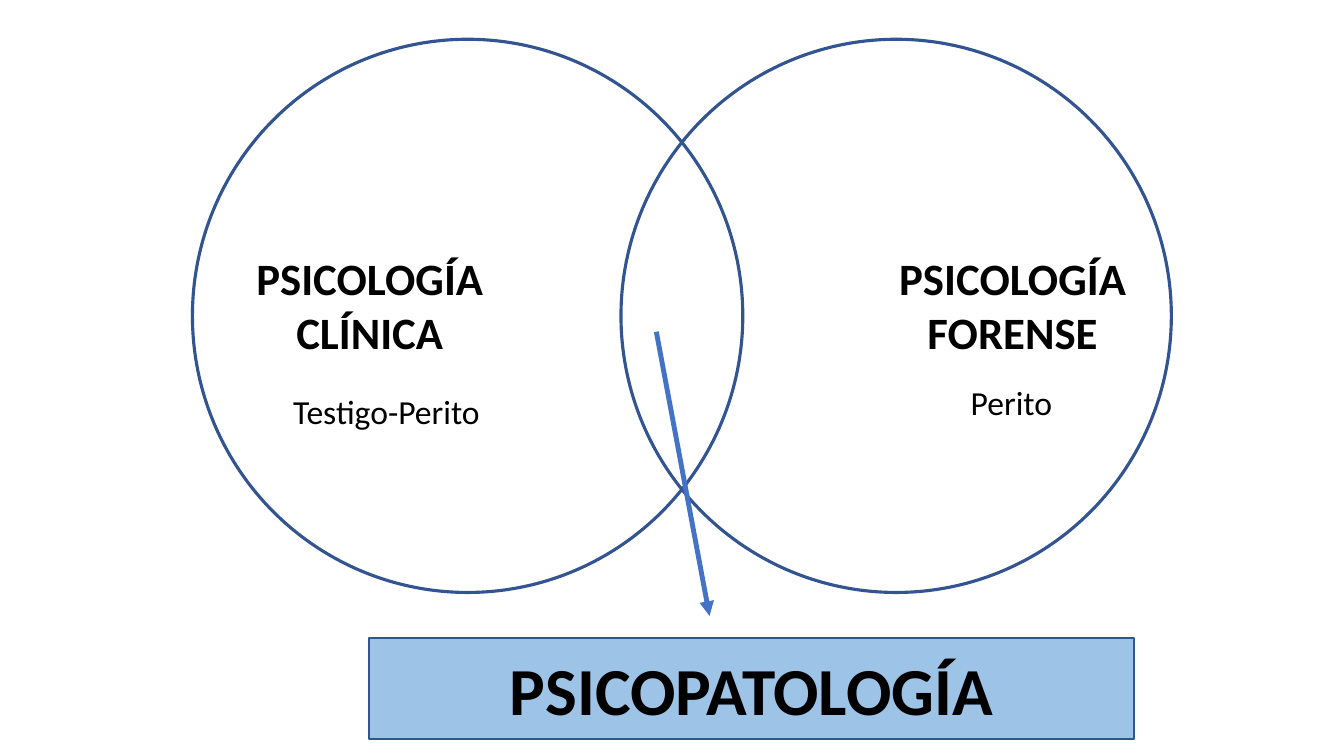
from lxml import etree
from pptx import Presentation
from pptx.dml.color import RGBColor
from pptx.enum.shapes import MSO_CONNECTOR, MSO_SHAPE
from pptx.enum.text import MSO_ANCHOR, PP_ALIGN
from pptx.oxml.ns import qn
from pptx.util import Cm, Pt

OVAL = MSO_SHAPE.OVAL
RECTANGLE = MSO_SHAPE.RECTANGLE
STRAIGHT = MSO_CONNECTOR.STRAIGHT
MIDDLE = MSO_ANCHOR.MIDDLE
CENTER = PP_ALIGN.CENTER

FONT = "Calibri"
COLORS = {
    "outline": "325491",
    "arrow": "4472C4",
    "banner": "9DC3E6",
    "text": "000000",
}


def color(key):
    return RGBColor.from_string(COLORS[key])


def write(frame, text, size, bold):
    frame.word_wrap = True
    frame.vertical_anchor = MIDDLE
    paragraph = frame.paragraphs[0]
    paragraph.text = text
    paragraph.alignment = CENTER
    font = paragraph.font
    font.name = FONT
    font.size = Pt(size)
    font.bold = bold
    font.color.rgb = color("text")


def add_outlined(slide, preset, left, top, width, height, weight):
    """Add an unfilled preset shape; lengths are in centimetres."""
    shape = slide.shapes.add_shape(
        preset, Cm(left), Cm(top), Cm(width), Cm(height))
    shape.shadow.inherit = False
    shape.fill.background()
    shape.line.color.rgb = color("outline")
    shape.line.width = Pt(weight)
    return shape


def add_label(slide, text, left, top, width, height, size, bold=False):
    label = slide.shapes.add_textbox(
        Cm(left), Cm(top), Cm(width), Cm(height))
    write(label.text_frame, text, size, bold)


def add_arrow(slide, x1, y1, x2, y2):
    arrow = slide.shapes.add_connector(
        STRAIGHT, Cm(x1), Cm(y1), Cm(x2), Cm(y2))
    arrow.line.color.rgb = color("arrow")
    arrow.line.width = Pt(3.5)
    etree.SubElement(arrow.line._get_or_add_ln(), qn("a:tailEnd"), type="triangle")
    etree.SubElement(arrow._element.spPr, qn("a:effectLst"))


def add_banner(slide, text, left, top, width, height):
    banner = add_outlined(slide, RECTANGLE, left, top, width, height, 1)
    banner.fill.solid()
    banner.fill.fore_color.rgb = color("banner")
    write(banner.text_frame, text, 48, True)


def main():
    presentation = Presentation()
    presentation.slide_width = Cm(33.87)
    presentation.slide_height = Cm(19.05)
    slide = presentation.slides.add_slide(presentation.slide_layouts[6])

    for field_left in (4.85, 15.65):
        add_outlined(slide, OVAL, field_left, 0.99, 13.87, 13.94, 2.25)

    for field, left in (("PSICOLOGÍA CLÍNICA", 5.8),
                        ("PSICOLOGÍA FORENSE", 22)):
        add_label(slide, field, left, 6.4, 7.04, 2.54, 32, bold=True)

    add_arrow(slide, 16.54, 8.36, 17.88, 15.52)

    for role, left, top in (("Testigo-Perito", 6.68, 9.53),
                            ("Perito", 22.43, 9.3)):
        add_label(slide, role, left, top, 6.12, 1.65, 24)

    add_banner(slide, "PSICOPATOLOGÍA", 9.3, 16.08, 19.28, 2.54)

    presentation.save("out.pptx")


if __name__ == "__main__":
    main()
